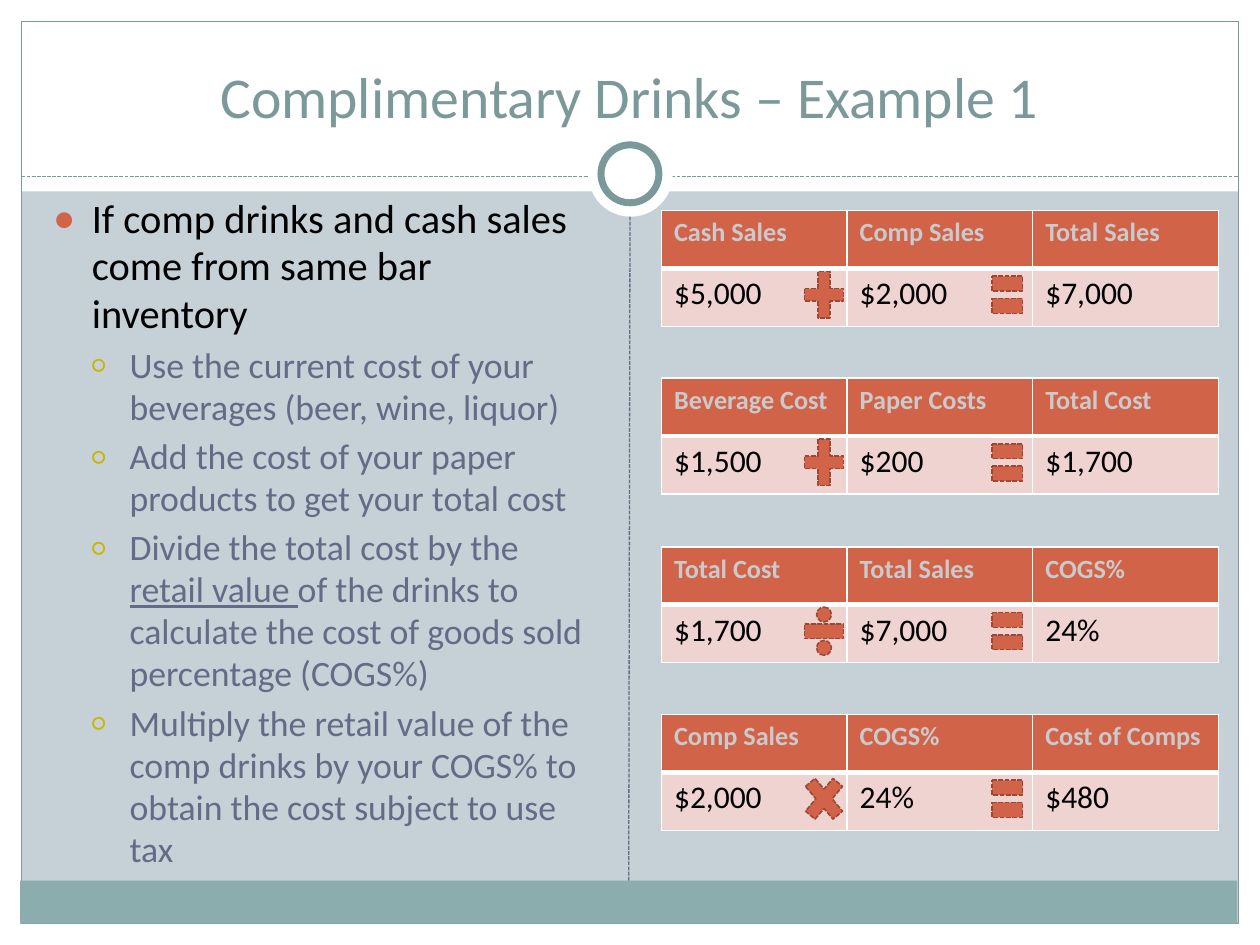
"""Build the slide that works out the cost of complimentary drinks."""
from dataclasses import dataclass
from typing import Optional

from lxml import etree
from pptx import Presentation
from pptx import util as u
from pptx.dml.color import RGBColor
from pptx.enum import dml, shapes, text
from pptx.oxml import ns

KIND = shapes.MSO_SHAPE


@dataclass(frozen=True)
class Theme:
    font: str = "Calibri"
    back: str = "C5D1D7"
    white: str = "FFFFFF"
    black: str = "000000"
    bar: str = "8CADAE"
    teal: str = "7C999A"
    slate: str = "646B86"
    rust: str = "D16349"
    edge: str = "9B4936"
    gold: str = "CCB400"
    pale: str = "EED3D0"
    silver: str = "CACACC"
    title: float = 33
    lead: float = 23.1
    point: float = 20.4
    head: float = 15
    value: float = 18


@dataclass(frozen=True)
class Box:
    left: float
    top: float
    wide: float
    high: float

    def emu(self) -> list:
        return [u.Inches(n) for n in (self.left, self.top, self.wide, self.high)]


@dataclass(frozen=True)
class Panel:
    box: Box
    fill: Optional[str] = None
    line: Optional[str] = None
    width: float = 0.75
    kind: int = KIND.RECTANGLE
    dash: Optional[int] = None


@dataclass(frozen=True)
class Level:
    size: float
    color: str
    mark: str
    tint: str
    scale: int
    left: float


@dataclass(frozen=True)
class Sum:
    heads: tuple
    values: tuple
    sign: int


T = Theme()
DASH = dml.MSO_LINE.SQUARE_DOT
PANELS = (
    Panel(Box(0, 7.33, 10, 0.17), T.white),
    Panel(Box(0, 0, 10, 1.52), T.white),
    Panel(Box(0, 0, 0.17, 7.5), T.white),
    Panel(Box(9.83, 0, 0.17, 7.5), T.white),
    Panel(Box(0.17, 0.17, 9.66, 7.16), None, T.teal),
)
FOOT = Panel(Box(0.16, 6.99, 9.66, 0.34), T.bar)
RINGS = (
    Panel(Box(4.67, 1.05, 0.67, 0.67), T.white, kind=KIND.OVAL),
    Panel(Box(4.77, 1.15, 0.46, 0.46), T.white, T.teal, 4, KIND.OVAL),
)
LEAD = Level(T.lead, T.black, "●", T.rust, 85, 0.3)
POINT = Level(T.point, T.slate, "○", T.gold, 70, 0.6)
POINTS = (
    (LEAD, ("If comp drinks and cash sales come from same bar inventory",)),
    (POINT, ("Use the current cost of your beverages (beer, wine, liquor)",)),
    (POINT, ("Add the cost of your paper products to get your total cost",)),
    (POINT, ("Divide the total cost by the ", "retail value ",
             "of the drinks to calculate the cost of goods sold percentage (COGS%)")),
    (POINT, ("Multiply the retail value of the comp drinks by your COGS% "
             "to obtain the cost subject to use tax",)),
)
SUMS = (
    Sum(("Cash Sales", "Comp Sales", "Total Sales"),
        ("$5,000", "$2,000", "$7,000"), KIND.MATH_PLUS),
    Sum(("Beverage Cost", "Paper Costs", "Total Cost"),
        ("$1,500", "$200", "$1,700"), KIND.MATH_PLUS),
    Sum(("Total Cost", "Total Sales", "COGS%"),
        ("$1,700", "$7,000", "24%"), KIND.MATH_DIVIDE),
    Sum(("Comp Sales", "COGS%", "Cost of Comps"),
        ("$2,000", "24%", "$480"), KIND.MATH_MULTIPLY),
)


def rgb(code: str) -> RGBColor:
    return RGBColor.from_string(code)


def put(item, **form) -> None:
    for name, value in form.items():
        setattr(item, name, value)


def write(para, words: str, size: float, color: str, **form) -> None:
    run = para.add_run()
    run.text = words
    put(run.font, name=T.font, size=u.Pt(size), **form)
    run.font.color.rgb = rgb(color)


def panel(slide, part: Panel):
    shape = slide.shapes.add_shape(part.kind, *part.box.emu())
    shape.shadow.inherit = False
    if part.fill:
        shape.fill.solid()
        shape.fill.fore_color.rgb = rgb(part.fill)
    else:
        shape.fill.background()
    if part.line:
        shape.line.color.rgb = rgb(part.line)
        put(shape.line, width=u.Pt(part.width), dash_style=part.dash)
    else:
        shape.line.fill.background()
    return shape


def rule(slide, start: tuple, end: tuple, color: str):
    ends = [u.Inches(n) for n in start + end]
    line = slide.shapes.add_connector(shapes.MSO_CONNECTOR.STRAIGHT, *ends)
    line.line.color.rgb = rgb(color)
    put(line.line, width=u.Pt(0.75), dash_style=DASH)
    etree.SubElement(line._element.spPr, ns.qn("a:effectLst"))
    return line


def frame(slide, box: Box, anchor: int):
    body = slide.shapes.add_textbox(*box.emu()).text_frame
    put(body, word_wrap=True, vertical_anchor=anchor)
    return body


def bullet(para, level: Level) -> None:
    prop = para._p.get_or_add_pPr()
    prop.set("marL", str(u.Inches(level.left)))
    prop.set("indent", str(u.Inches(-0.3)))
    tint = etree.SubElement(prop, ns.qn("a:buClr"))
    etree.SubElement(tint, ns.qn("a:srgbClr"), val=level.tint)
    etree.SubElement(prop, ns.qn("a:buSzPct"), val=str(level.scale * 1000))
    etree.SubElement(prop, ns.qn("a:buFont"), typeface=T.font)
    etree.SubElement(prop, ns.qn("a:buChar"), char=level.mark)


def points(slide) -> None:
    body = frame(slide, Box(0.33, 1.5, 4.42, 5.5), text.MSO_ANCHOR.TOP)
    for row, (level, parts) in enumerate(POINTS):
        para = body.add_paragraph() if row else body.paragraphs[0]
        put(para, space_before=u.Pt(level.size * 0.2), line_spacing=0.98)
        bullet(para, level)
        for spot, words in enumerate(parts):
            write(para, words, level.size, level.color, underline=spot == 1)


def border(cell, low: float) -> None:
    prop = cell._tc.get_or_add_tcPr()
    for spot, (side, wide) in enumerate(zip("LRTB", (1, 1, 1, low))):
        line = etree.Element(ns.qn("a:ln" + side), w=str(u.Pt(wide)))
        fill = etree.SubElement(line, ns.qn("a:solidFill"))
        etree.SubElement(fill, ns.qn("a:srgbClr"), val=T.white)
        prop.insert(spot, line)


def grid(slide, top: float, item: Sum) -> None:
    box = Box(5.25, top, 4.42, 0.92)
    table = slide.shapes.add_table(2, 3, *box.emu()).table
    rows = ((item.heads, T.rust, T.silver, T.head, True, 3),
            (item.values, T.pale, T.black, T.value, False, 1))
    for row, (words, fill, color, size, bold, low) in enumerate(rows):
        for col, word in enumerate(words):
            cell = table.cell(row, col)
            cell.fill.solid()
            cell.fill.fore_color.rgb = rgb(fill)
            write(cell.text_frame.paragraphs[0], word, size, color, bold=bold)
            border(cell, low)


def signs(slide, top: float, item: Sum) -> None:
    for left, wide, kind in ((6.33, 0.42, item.sign), (7.83, 0.33, KIND.MATH_EQUAL)):
        box = Box(left, top + 0.42, wide, 0.5)
        panel(slide, Panel(box, T.rust, T.edge, 0.9, kind, DASH))


def main() -> None:
    deck = Presentation()
    put(deck, slide_width=u.Inches(10), slide_height=u.Inches(7.5))
    slide = deck.slides.add_slide(deck.slide_layouts[6])
    slide.background.fill.solid()
    slide.background.fill.fore_color.rgb = rgb(T.back)
    for part in PANELS:
        panel(slide, part)
    foot = panel(slide, FOOT)
    rule(slide, (0.17, 1.4), (9.83, 1.4), T.teal)
    for part in RINGS:
        panel(slide, part)
    rule(slide, (4.99, 6.99), (5, 1.72), T.slate).begin_connect(foot, 0)
    title = frame(slide, Box(0.33, 0.25, 9.33, 0.83), text.MSO_ANCHOR.BOTTOM)
    title.paragraphs[0].alignment = text.PP_ALIGN.CENTER
    write(title.paragraphs[0], "Complimentary Drinks – Example 1", T.title, T.teal)
    points(slide)
    for draw in (grid, signs):
        for row, item in enumerate(SUMS):
            draw(slide, round(1.67 + row * 4 / 3, 2), item)
    deck.save("out.pptx")


if __name__ == "__main__":
    main()
